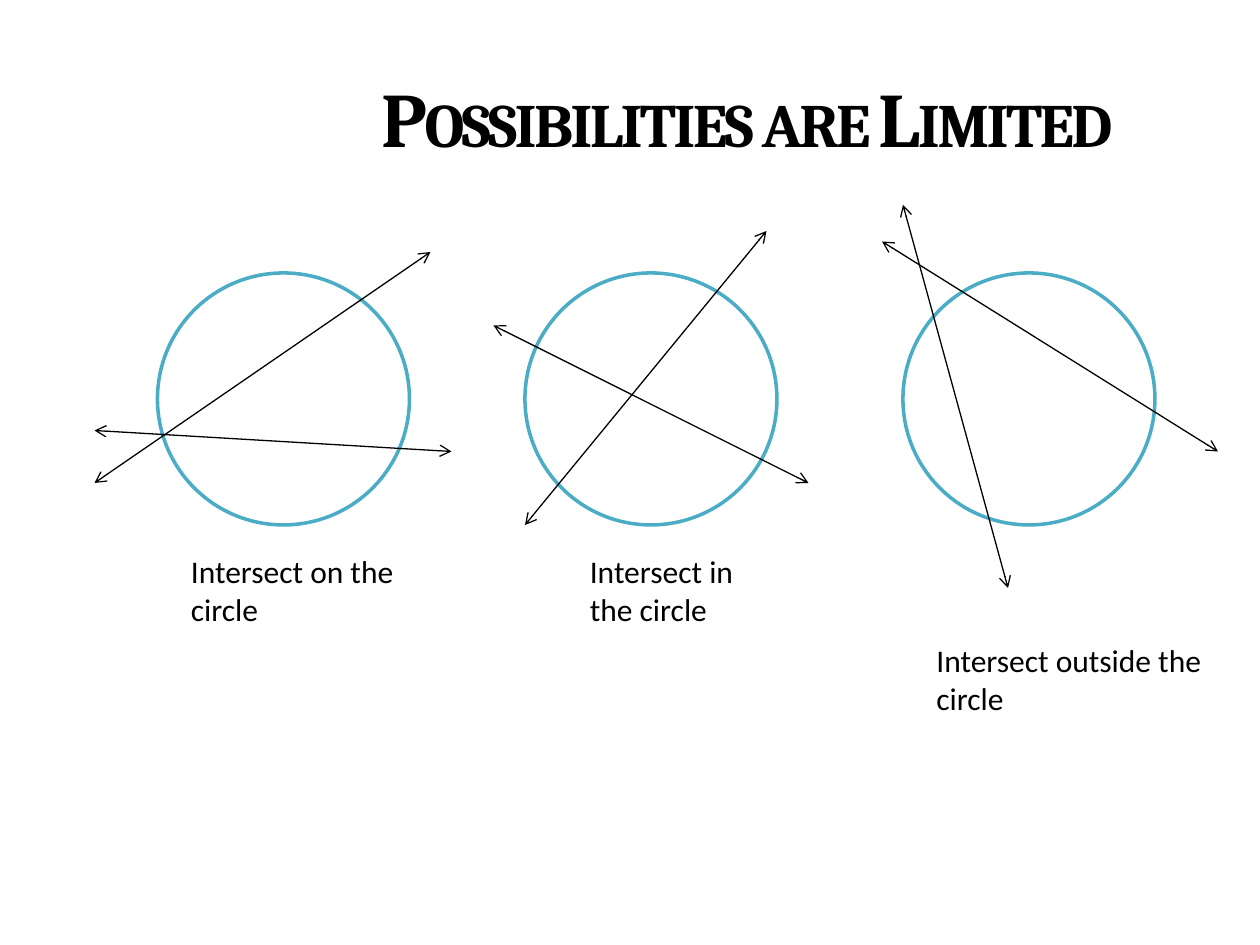
from dataclasses import dataclass

from pptx import Presentation
from pptx.dml.color import RGBColor
from pptx.enum.shapes import MSO_CONNECTOR as CONN, MSO_SHAPE as SHAPE
from pptx.enum.text import MSO_ANCHOR as ANCHOR, MSO_AUTO_SIZE as FIT, PP_ALIGN as ALIGN
from pptx.oxml.ns import qn
from pptx.util import Inches, Pt
from lxml.etree import SubElement

BLACK = RGBColor(0x00, 0x00, 0x00)
WHITE = RGBColor(0xFF, 0xFF, 0xFF)
TEAL = RGBColor(0x4B, 0xAC, 0xC6)

WIDTH, HEIGHT = Inches(10), Inches(7.5)
COLS = 120
CELL = WIDTH / COLS
CIRCLE_ROW, CIRCLE_SIZE = 26, 24

Box = tuple[float, float, float, float]
Line = tuple[float, float, float, float]


@dataclass(frozen=True)
class Case:
    circle_col: float
    lines: tuple[Line, Line]
    caption: str
    caption_box: Box


CASES = (
    Case(15, ((9, 46, 41, 24), (9, 41, 43, 43)),
         "Intersect on the circle", (17, 52, 26, 8.5)),
    Case(50, ((47, 31, 77, 46), (50, 50, 73, 22)),
         "Intersect in the circle", (55, 52, 19, 8.5)),
    Case(86, ((84, 23, 116, 43), (86, 19.5, 96, 56)),
         "Intersect outside the circle", (88, 60.5, 28, 8.5)),
)


def grid(*cells: float) -> list[int]:
    return [round(c * CELL) for c in cells]


def write(tf, text: str, *, font: str, size: float, bold: bool = False,
          align=ALIGN.LEFT, anchor=ANCHOR.TOP, fit=FIT.NONE):
    tf.word_wrap = True
    tf.auto_size = fit
    tf.vertical_anchor = anchor
    p = tf.paragraphs[0]
    p.alignment = align
    r = p.add_run()
    r.text = text
    r.font.name, r.font.size, r.font.bold = font, Pt(size), bold
    r.font.color.rgb = BLACK
    return r


def add_title(slide, text: str, box: Box) -> None:
    sp = slide.shapes.title
    sp.left, sp.top, sp.width, sp.height = grid(*box)
    r = write(sp.text_frame, text, font="Cambria", size=44, bold=True,
              align=ALIGN.CENTER, anchor=ANCHOR.MIDDLE)
    rpr = r.font._element
    rpr.set("cap", "small")
    rpr.set("spc", "-150")


def add_circle(slide, col: float) -> None:
    sp = slide.shapes.add_shape(
        SHAPE.OVAL, *grid(col, CIRCLE_ROW, CIRCLE_SIZE, CIRCLE_SIZE))
    sp.shadow.inherit = False
    sp.fill.solid()
    sp.fill.fore_color.rgb = WHITE
    sp.line.color.rgb = TEAL
    sp.line.width = Pt(2)


def add_secant(slide, line: Line) -> None:
    cxn = slide.shapes.add_connector(CONN.STRAIGHT, *grid(*line))
    cxn.line.color.rgb = BLACK
    cxn.line.width = Pt(0.75)
    ln = cxn.line._get_or_add_ln()
    for end in ("a:headEnd", "a:tailEnd"):
        SubElement(ln, qn(end), type="arrow")
    SubElement(cxn._element.spPr, qn("a:effectLst"))


def add_caption(slide, text: str, box: Box) -> None:
    sp = slide.shapes.add_textbox(*grid(*box))
    write(sp.text_frame, text, font="Calibri", size=18, fit=FIT.SHAPE_TO_FIT_TEXT)


def main() -> None:
    prs = Presentation()
    prs.slide_width, prs.slide_height = WIDTH, HEIGHT
    slide = prs.slides.add_slide(prs.slide_layouts.get_by_name("Title Only"))
    add_title(slide, "Possibilities are Limited", (22, 3.6, 92, 15))
    for case in CASES:
        add_circle(slide, case.circle_col)
        for line in case.lines:
            add_secant(slide, line)
        add_caption(slide, case.caption, case.caption_box)
    prs.save("out.pptx")


if __name__ == "__main__":
    main()
